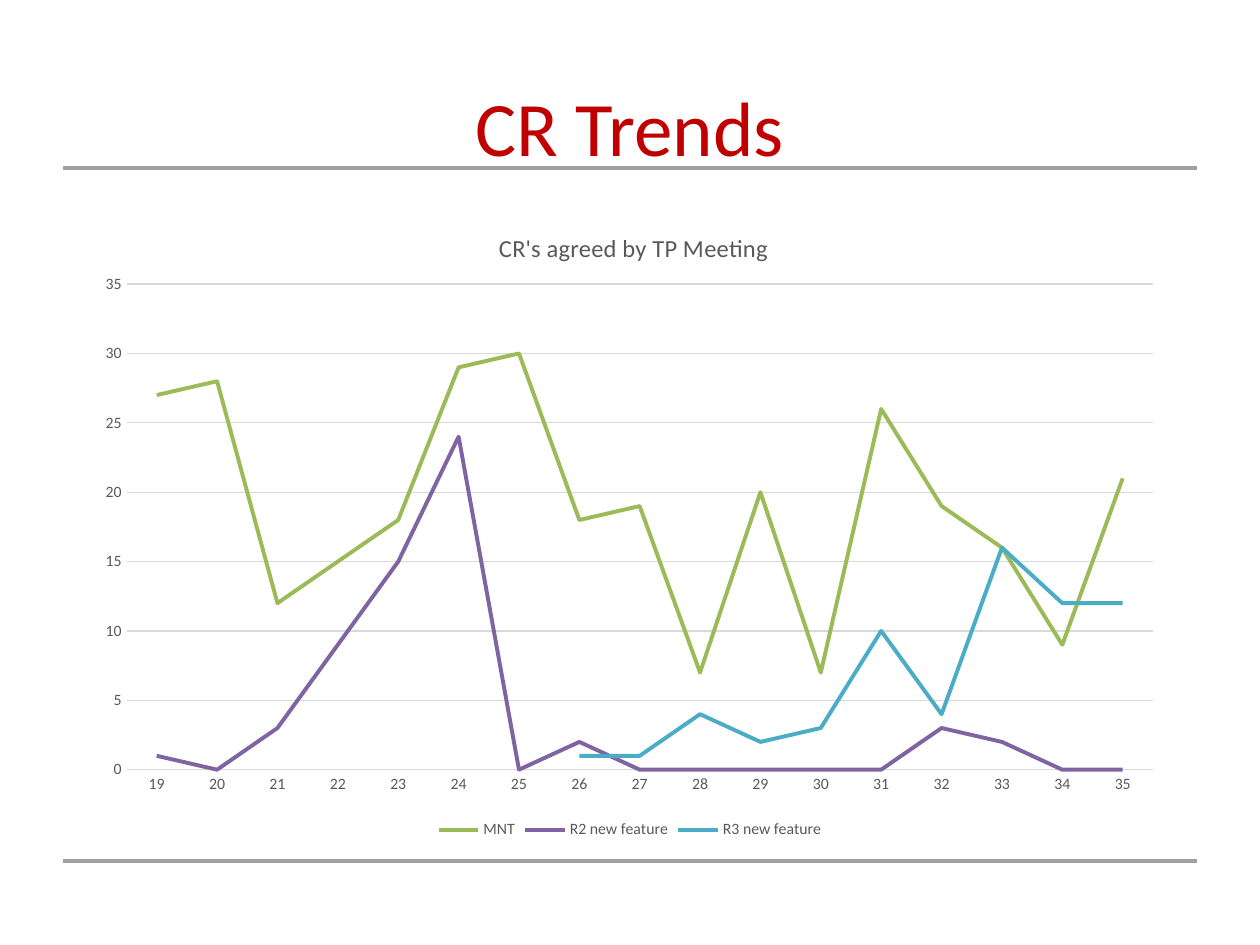
"""Build the CR Trends slide with its line chart of agreed change requests."""
from typing import NamedTuple, Optional

from lxml.etree import SubElement
from pptx import Presentation
from pptx.chart.chart import Chart
from pptx.chart.data import CategoryChartData
from pptx.dml.color import RGBColor
from pptx.enum.chart import XL_CHART_TYPE, XL_LEGEND_POSITION, XL_TICK_MARK
from pptx.enum.shapes import MSO_CONNECTOR
from pptx.enum.text import MSO_ANCHOR, PP_ALIGN
from pptx.oxml import parse_xml
from pptx.oxml.ns import nsdecls, qn
from pptx.slide import Slide
from pptx.util import Inches, Pt

PX = Inches(1) / 126
FONT = "Calibri"
COLORS = {
    "title": "C00000",
    "rule": "A0A0A3",
    "label": "595959",
    "grid": "D9D9D9",
    "maintenance": "9BBB59",
    "release_2": "8064A2",
    "release_3": "4BACC6",
}


class Box(NamedTuple):
    left: int
    top: int
    width: int
    height: int

    def emu(self) -> list[int]:
        return [round(length * PX) for length in self]


class Trend(NamedTuple):
    name: str
    color: str
    counts: list[Optional[int]]


TITLE_BOX = Box(63, 73, 1134, 158)
CHART_BOX = Box(84, 199, 1092, 645)
PLOT_BOX = Box(127, 284, 1027, 486)
HEADING_BOX = Box(495, 227, 268, 28)
RULE_TOPS = (861, 168)
MEETINGS = range(19, 36)
TRENDS = [
    Trend("MNT", "maintenance",
          [27, 28, 12, 15, 18, 29, 30, 18, 19, 7, 20, 7, 26, 19, 16, 9, 21]),
    Trend("R2 new feature", "release_2",
          [1, 0, 3, 9, 15, 24, 0, 2, 0, 0, 0, 0, 0, 3, 2, 0, 0]),
    Trend("R3 new feature", "release_3",
          [None] * 7 + [1, 1, 4, 2, 3, 10, 4, 16, 12, 12]),
]


def style_font(font, size: int, color: str) -> None:
    font.name = FONT
    font.size = Pt(size)
    font.bold = False
    font.color.rgb = RGBColor.from_string(COLORS[color])


def style_line(line, width: float, color: str) -> None:
    line.width = Pt(width)
    line.color.rgb = RGBColor.from_string(COLORS[color])


def add_rule(slide: Slide, top: int) -> None:
    left, y, width, _ = Box(63, top, 1134, 0).emu()
    rule = slide.shapes.add_connector(MSO_CONNECTOR.STRAIGHT, left, y, left + width, y)
    style_line(rule.line, 1.75, "rule")
    SubElement(rule._element.spPr, qn("a:effectLst"))


def set_title(slide: Slide, text: str) -> None:
    title = slide.shapes.title
    title.left, title.top, title.width, title.height = TITLE_BOX.emu()
    title.text_frame.text = text
    title.text_frame.vertical_anchor = MSO_ANCHOR.TOP
    heading = title.text_frame.paragraphs[0]
    heading.alignment = PP_ALIGN.CENTER
    style_font(heading.font, 44, "title")


def manual_layout(box: Box, with_size: bool):
    places = {
        "x": (box.left - CHART_BOX.left) / CHART_BOX.width,
        "y": (box.top - CHART_BOX.top) / CHART_BOX.height,
    }
    sizes = {"w": box.width / CHART_BOX.width, "h": box.height / CHART_BOX.height}
    target = '<c:layoutTarget val="inner"/>' if with_size else ""
    modes = "".join(f'<c:{key}Mode val="edge"/>' for key in places)
    ratios = places | sizes if with_size else places
    values = "".join(f'<c:{key} val="{ratio:.3f}"/>' for key, ratio in ratios.items())
    return parse_xml(f'<c:layout {nsdecls("c")}><c:manualLayout>{target}{modes}{values}'
                     "</c:manualLayout></c:layout>")


def place_part(part, box: Box, index: int, with_size: bool) -> None:
    for layout in part.findall(qn("c:layout")):
        part.remove(layout)
    part.insert(index, manual_layout(box, with_size))


def style_axes(chart: Chart) -> None:
    for axis in (chart.category_axis, chart.value_axis):
        axis.major_tick_mark = axis.minor_tick_mark = XL_TICK_MARK.NONE
        style_font(axis.tick_labels.font, 9, "label")
    style_line(chart.category_axis.format.line, 0.75, "grid")
    counts = chart.value_axis
    counts.minimum_scale, counts.maximum_scale, counts.major_unit = 0, 35, 5
    counts.format.line.fill.background()
    style_line(counts.major_gridlines.format.line, 0.75, "grid")


def add_trend_chart(slide: Slide, heading: str) -> None:
    agreed = CategoryChartData(number_format="General")
    agreed.categories = [str(meeting) for meeting in MEETINGS]
    for trend in TRENDS:
        agreed.add_series(trend.name, trend.counts)
    chart = slide.shapes.add_chart(XL_CHART_TYPE.LINE, *CHART_BOX.emu(), agreed).chart
    chart.font.name = FONT
    chart.font.size = Pt(10)
    chart.has_title = True
    chart.chart_title.text_frame.text = heading
    style_font(chart.chart_title.text_frame.paragraphs[0].font, 14, "label")
    chart.chart_title.include_in_layout = False
    chart.has_legend = True
    chart.legend.position = XL_LEGEND_POSITION.BOTTOM
    chart.legend.include_in_layout = False
    style_font(chart.legend.font, 9, "label")
    style_axes(chart)
    chart.plots[0].vary_by_categories = False
    for series, trend in zip(chart.plots[0].series, TRENDS):
        series.smooth = False
        style_line(series.format.line, 2.25, trend.color)
    place_part(chart.chart_title._element, HEADING_BOX, 1, False)
    place_part(chart._chartSpace.chart.plotArea, PLOT_BOX, 0, True)


def main() -> None:
    deck = Presentation()
    deck.slide_width, deck.slide_height = Inches(10), Inches(7.5)
    slide = deck.slides.add_slide(deck.slide_layouts[5])
    for top in RULE_TOPS:
        add_rule(slide, top)
    set_title(slide, "CR Trends")
    add_trend_chart(slide, "CR's agreed by TP Meeting")
    deck.save("out.pptx")


if __name__ == "__main__":
    main()
